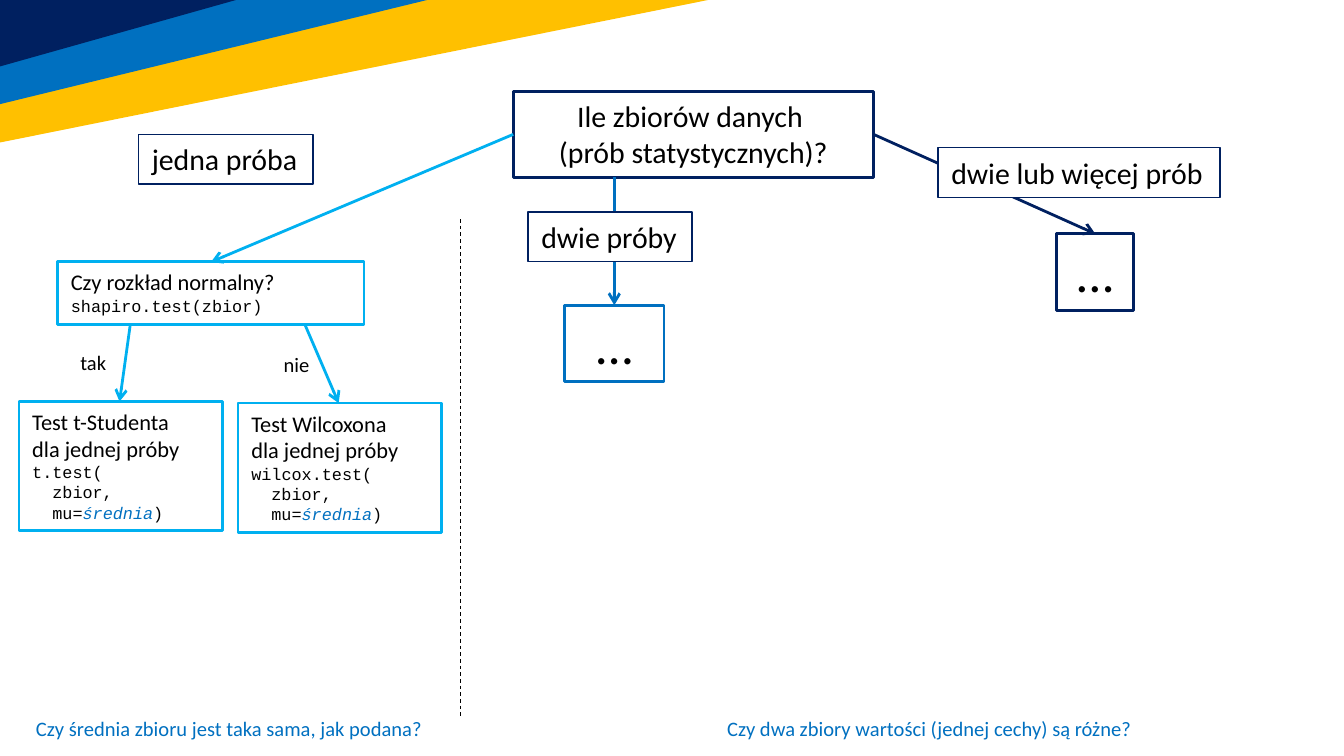
from lxml import etree
from pptx import Presentation
from pptx import util as u
from pptx.dml.color import RGBColor
from pptx.enum import dml, shapes, text
from pptx.oxml.ns import qn

NAVY = RGBColor(0x00, 0x20, 0x60)
BLUE = RGBColor(0x00, 0x70, 0xC0)
SKY = RGBColor(0x00, 0xB0, 0xF0)
GOLD = RGBColor(0xFF, 0xC0, 0x00)
BLACK = RGBColor(0, 0, 0)
WHITE = RGBColor(0xFF, 0xFF, 0xFF)

CENTER = text.PP_ALIGN.CENTER
LEFT = text.PP_ALIGN.LEFT
HEADING = {"name": "Calibri", "size": u.Pt(16)}
BODY = {"name": "Calibri", "size": u.Pt(12)}
SMALL = {"name": "Calibri", "size": u.Pt(11)}
DOTS = {"name": "Calibri", "size": u.Pt(28)}
CODE = {"name": "Courier New", "size": u.Pt(9)}
CODE_BLUE = {**CODE, "italic": True}
CODE_INDENT = u.Cm(0.38)


def set_all(target, values):
    for name, value in values.items():
        setattr(target, name, value)


def add_corner_band(page, length, height, color):
    left = -2.71 + (length - height) / 2
    top = -1.05 + (height - length) / 2
    band = page.shapes.add_shape(
        shapes.MSO_SHAPE.RIGHT_TRIANGLE,
        u.Cm(left), u.Cm(top), u.Cm(height), u.Cm(length))
    band.rotation = 90
    band.shadow.inherit = False
    band.fill.solid()
    band.fill.fore_color.rgb = color
    band.line.fill.background()


def add_line(page, start, end, color, width=1.5, arrow=True):
    line = page.shapes.add_connector(
        shapes.MSO_CONNECTOR.STRAIGHT, *map(u.Cm, start + end))
    line.line.color.rgb = color
    line.line.width = u.Pt(width)
    properties = line._element.spPr
    if arrow:
        etree.SubElement(line.line._get_or_add_ln(), qn("a:tailEnd"), type="arrow")
    else:
        line.line.dash_style = dml.MSO_LINE.DASH
    etree.SubElement(properties, qn("a:effectLst"))


def add_span(para, words, font, color):
    for number, part in enumerate(words.split("\n")):
        if number:
            para.add_line_break()
        span = para.add_run()
        span.text = part
        set_all(span.font, font)
        span.font.color.rgb = color


def add_box(page, place, paragraphs, outline=None, width=1.5, fill=None,
            align=LEFT, wrap=True):
    box = page.shapes.add_textbox(*map(u.Cm, place))
    if outline is not None:
        box.line.color.rgb = outline
        box.line.width = u.Pt(width)
    if fill is not None:
        box.fill.solid()
        box.fill.fore_color.rgb = fill
    frame = box.text_frame
    set_all(frame, {"word_wrap": wrap,
                    "auto_size": text.MSO_AUTO_SIZE.SHAPE_TO_FIT_TEXT})
    for number, (spans, indent) in enumerate(paragraphs):
        para = frame.add_paragraph() if number else frame.paragraphs[0]
        para.alignment = align
        if indent:
            para._p.get_or_add_pPr().set("marL", str(int(indent)))
        for words, font, color in spans:
            add_span(para, words, font, color)


def single(words, font, color=BLACK):
    return [([(words, font, color)], 0)]


def add_branch_label(page, left, top, width, words):
    add_box(page, (left, top, width, 0.94), single(words, HEADING),
            NAVY, 0.75, WHITE, wrap=False)


def add_caption(page, left, top, width, words, color=BLACK, align=LEFT):
    add_box(page, (left, top, width, 0.74), single(words, SMALL, color),
            align=align, wrap=False)


def add_test(page, left, top, name, function):
    paragraphs = [
        *single(name, BODY),
        *single("dla jednej próby", BODY),
        *single(function + "(", CODE),
        ([("zbior,", CODE, BLACK)], CODE_INDENT),
        ([("mu=", CODE, BLACK), ("średnia", CODE_BLUE, BLUE),
          (")", CODE, BLACK)], CODE_INDENT),
    ]
    add_box(page, (left, top, 3.84, 2.44), paragraphs, SKY)


def add_one_sample(page):
    add_branch_label(page, 2.62, 2.54, 3.3, "jedna próba")
    add_line(page, (9.7, 2.54), (3.99, 4.95), SKY)
    add_box(page, (1.09, 4.95, 5.79, 1.19),
            single("Czy rozkład normalny?", BODY)
            + single("shapiro.test(zbior)", CODE), SKY)
    add_line(page, (2.46, 6.15), (2.26, 7.59), SKY)
    add_test(page, 0.36, 7.59, "Test t-Studenta", "t.test")
    add_caption(page, 1.27, 6.5, 1.02, "tak")
    add_line(page, (5.77, 6.15), (6.4, 7.62), SKY)
    add_test(page, 4.5, 7.62, "Test Wilcoxona", "wilcox.test")
    add_caption(page, 5.11, 6.53, 0.99, "nie")


def add_two_samples(page):
    add_box(page, (10.67, 5.77, 1.88, 1.45), single("…", DOTS), BLUE, align=CENTER)
    add_line(page, (11.61, 3.35), (11.61, 5.77), BLUE)
    add_branch_label(page, 9.98, 4.01, 3.1, "dwie próby")


def add_more_samples(page):
    add_line(page, (16.51, 2.54), (20.7, 4.42), NAVY)
    add_branch_label(page, 17.73, 2.79, 5.33, "dwie lub więcej prób")
    add_box(page, (19.96, 4.42, 1.47, 1.45), single("...", DOTS), NAVY, align=CENTER)


def main():
    deck = Presentation()
    set_all(deck, {"slide_width": u.Cm(25.4), "slide_height": u.Cm(14.29)})
    page = deck.slides.add_slide(deck.slide_layouts[6])
    for length, height, color in ((21.31, 4.29, GOLD), (15.09, 3.68, BLUE),
                                  (10.9, 3.07, NAVY)):
        add_corner_band(page, length, height, color)
    add_box(page, (9.7, 1.73, 6.81, 1.63),
            single("Ile zbiorów danych \n(prób statystycznych)?", HEADING),
            NAVY, align=CENTER)
    add_line(page, (8.71, 4.14), (8.71, 13.54), BLACK, 0.5, arrow=False)
    add_one_sample(page)
    add_two_samples(page)
    add_more_samples(page)
    add_caption(page, 0.43, 13.41, 7.87,
                "Czy średnia zbioru jest taka sama, jak podana?", BLUE)
    add_caption(page, 13.41, 13.41, 8.31,
                "Czy dwa zbiory wartości (jednej cechy) są różne?", BLUE, CENTER)
    deck.save("out.pptx")


if __name__ == "__main__":
    main()
